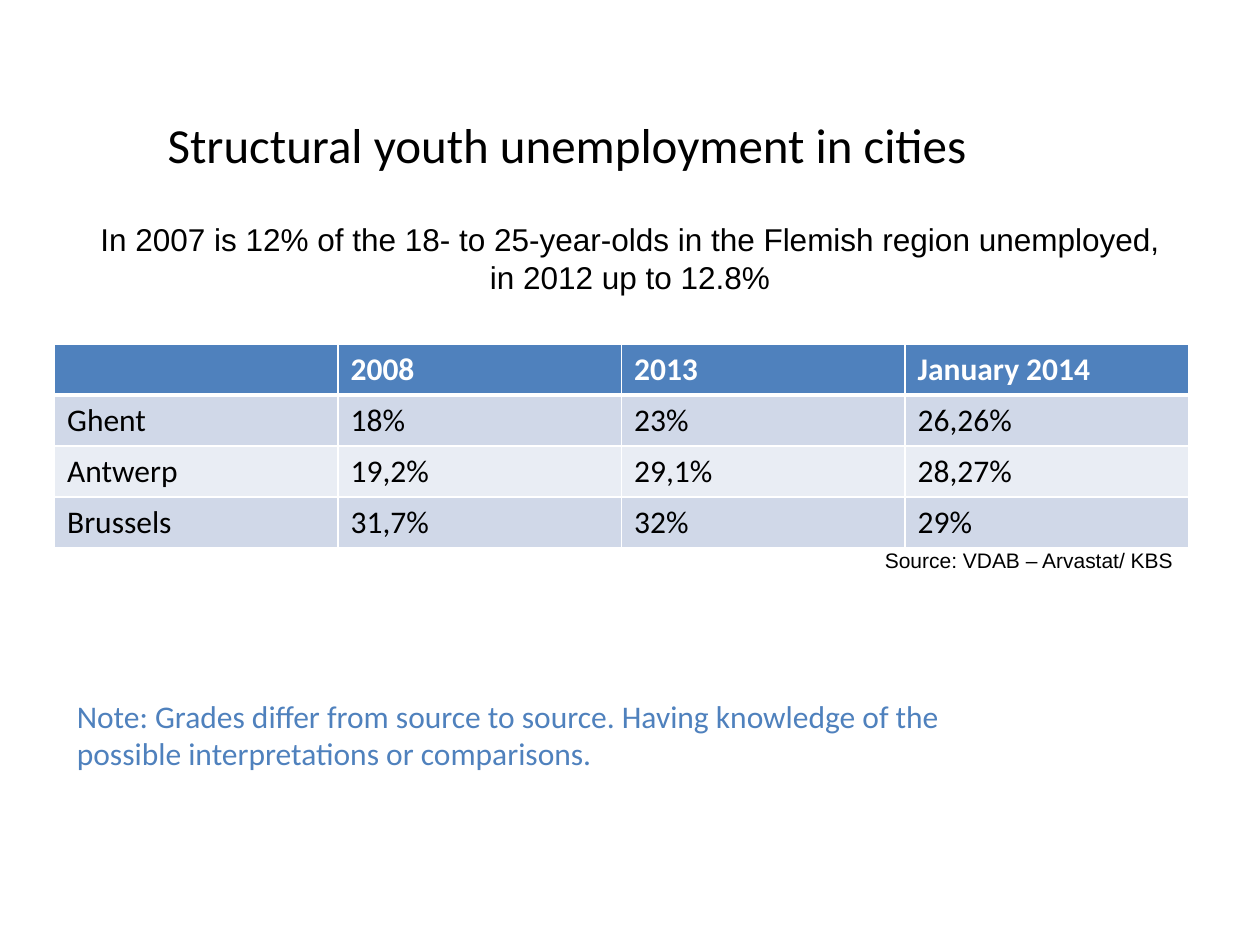
from lxml import etree
from pptx import Presentation
from pptx.dml.color import RGBColor
from pptx.enum.text import MSO_ANCHOR, PP_ALIGN
from pptx.oxml.ns import qn
from pptx.util import Cm, Pt

LEFT, MID, RIGHT = PP_ALIGN.LEFT, PP_ALIGN.CENTER, PP_ALIGN.RIGHT
TOP, CENTRE = MSO_ANCHOR.TOP, MSO_ANCHOR.MIDDLE
HUES = {"head": "4F81BD", "odd": "D0D8E8", "even": "E9EDF4",
        "text": "000000", "white": "FFFFFF"}
RATES = [
    ("", "2008", "2013", "January 2014"),
    ("Ghent", "18%", "23%", "26,26%"),
    ("Antwerp", "19,2%", "29,1%", "28,27%"),
    ("Brussels", "31,7%", "32%", "29%"),
]


def hue(name):
    """Return the named colour."""
    return RGBColor.from_string(HUES[name])


def style(para, size, face, tint, bold=False):
    """Format the runs of a paragraph."""
    for run in para.runs:
        run.font.size = Pt(size)
        run.font.name = face
        run.font.bold = bold
        run.font.color.rgb = hue(tint)


def add_text(slide, box, text, size, face, align=LEFT, tint="text", anchor=TOP):
    """Place one wrapped paragraph in a box."""
    frame = slide.shapes.add_textbox(*map(Cm, box)).text_frame
    frame.word_wrap = True
    frame.vertical_anchor = anchor
    frame.text = text
    para = frame.paragraphs[0]
    para.alignment = align
    style(para, size, face, tint)


def add_edge(cell, side, width):
    """Draw a white border on one side of a cell."""
    props = cell._tc.get_or_add_tcPr()
    line = etree.SubElement(props, qn("a:ln" + side), w=str(Pt(width)))
    fill = etree.SubElement(line, qn("a:solidFill"))
    etree.SubElement(fill, qn("a:srgbClr"), val=HUES["white"])


def add_rates(slide, box, rows):
    """Place the table of rates in a box, with equal rows and columns."""
    shape = slide.shapes.add_table(len(rows), len(rows[0]), *map(Cm, box))
    for r, row in enumerate(rows):
        head = r == 0
        band = "head" if head else "odd" if r % 2 else "even"
        for c, text in enumerate(row):
            cell = shape.table.cell(r, c)
            for side in "LRTB":
                thick = (head and side == "B") or (r == 1 and side == "T")
                add_edge(cell, side, 3 if thick else 1)
            cell.fill.solid()
            cell.fill.fore_color.rgb = hue(band)
            cell.text_frame.text = text
            style(cell.text_frame.paragraphs[0], 18, "Calibri",
                  "white" if head else "text", head)


def main():
    """Build and save the slide."""
    deck = Presentation()
    deck.slide_width, deck.slide_height = Cm(25.4), Cm(19.05)
    slide = deck.slides.add_slide(deck.slide_layouts[6])
    add_text(slide, (0, 1.32, 22.86, 3.18), "Structural youth unemployment in cities",
             28, "Calibri", MID, anchor=CENTRE)
    add_rates(slide, (1.1, 6.93, 22.86, 4.12), RATES)
    add_text(slide, (7.29, 10.92, 16.61, 0.76), "Source: VDAB – Arvastat/ KBS",
             12, "Arial", RIGHT)
    add_text(slide, (1.7, 4.32, 22, 1.8),
             "In 2007 is 12% of the 18- to 25-year-olds in the Flemish region "
             "unemployed, in 2012 up to 12.8%", 18, "Arial", MID)
    add_text(slide, (1.3, 13.92, 18, 2.57),
             "Note: Grades differ from source to source. Having knowledge of the "
             "possible interpretations or comparisons.", 18, "Calibri", tint="head")
    deck.save("out.pptx")


if __name__ == "__main__":
    main()
